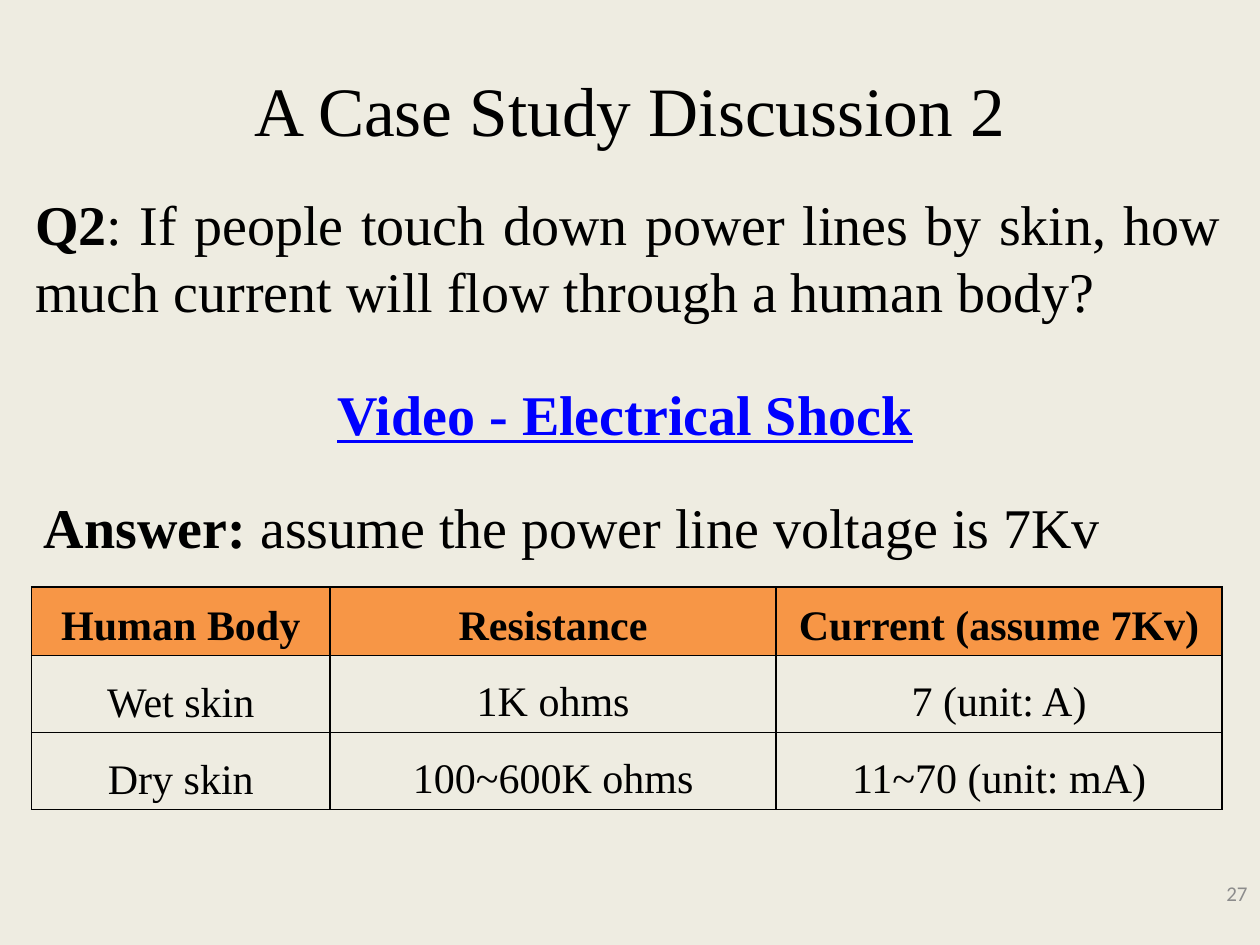
from lxml.etree import SubElement
from pptx import Presentation
from pptx.dml.color import RGBColor as RGB
from pptx.enum.text import MSO_ANCHOR as ANCHOR, MSO_AUTO_SIZE as FIT, PP_ALIGN as ALIGN
from pptx.oxml.ns import qn
from pptx.util import Inches, Pt

COLORS = {"paper": "EEECE1", "ink": "000000", "link": "0000FF",
          "number": "8C8C8C", "header": "F79646"}
SERIF = {"name": "Times New Roman", "size": Pt(32), "bold": False}
BOLD = {"bold": True}
INSETS = ("margin_left", "margin_top", "margin_right", "margin_bottom")
FLUSH = dict.fromkeys(INSETS, 0)
MIDDLE = {"vertical_anchor": ANCHOR.MIDDLE, "word_wrap": True}
GROWING = {"word_wrap": False, "auto_size": FIT.SHAPE_TO_FIT_TEXT}

TEXTS = [
    ((0.5, 0.55, 9, 0.62), ALIGN.CENTER, MIDDLE,
     [("A Case Study Discussion 2", "ink", {"size": Pt(39.6)})]),
    ((7.75, 6.89, 2.25, 0.4), ALIGN.RIGHT, MIDDLE,
     [("27", "number", {"name": "Calibri", "size": Pt(12)})]),
    ((0.28, 1.5, 9.42, 1.08), ALIGN.JUSTIFY, {**FLUSH, **GROWING, "word_wrap": True},
     [("Q2", "ink", BOLD),
      (": If people touch down power lines by skin, how much current "
       "will flow through a human body?", "ink", {})]),
    ((2.58, 2.96, 4.81, 0.64), ALIGN.LEFT, GROWING,
     [("Video - Electrical Shock", "link", {"bold": True, "underline": True})]),
    ((0.25, 3.86, 8.96, 0.64), ALIGN.LEFT, GROWING,
     [("Answer: ", "ink", BOLD),
      ("assume the power line voltage is 7Kv", "ink", {})]),
]

SKIN_ROWS = [
    ("Human Body", "Resistance", "Current (assume 7Kv)"),
    ("Wet skin", "1K ohms", "7 (unit: A)"),
    ("Dry skin", "100~600K ohms", "11~70 (unit: mA)"),
]
TABLE_BOX = (0.25, 4.66, 9.45, 1.76)
COLUMN_WIDTHS = (2.37, 3.54, 3.54)
ROW_HEIGHTS = (0.54, 0.61, 0.61)


def apply(target, values):
    for key, value in values.items():
        setattr(target, key, value)


def write(paragraph, align, runs):
    paragraph.alignment = align
    for words, color, font in runs:
        run = paragraph.add_run()
        run.text = words
        apply(run.font, {**SERIF, **font})
        run.font.color.rgb = RGB.from_string(COLORS[color])


def add_borders(cell):
    properties = cell._tc.get_or_add_tcPr()
    for side in ("a:lnL", "a:lnR", "a:lnT", "a:lnB"):
        line = SubElement(properties, qn(side), w=str(Pt(1)))
        SubElement(SubElement(line, qn("a:solidFill")), qn("a:srgbClr"), val=COLORS["ink"])


def fill_cell(cell, words, is_header, is_label):
    add_borders(cell)
    if is_header:
        cell.fill.solid()
        cell.fill.fore_color.rgb = RGB.from_string(COLORS["header"])
        top, spacing = 0.19, 0.76
    else:
        cell.fill.background()
        top, spacing = (0.26, 0.74) if is_label else (0.24, 0.76)
    apply(cell, dict(zip(INSETS, map(Inches, (0.1, top, 0.1, 0.05)))))
    cell.vertical_anchor = ANCHOR.MIDDLE
    paragraph = cell.text_frame.paragraphs[0]
    paragraph.line_spacing = spacing
    write(paragraph, ALIGN.CENTER, [(words, "ink", {"size": Pt(24), "bold": is_header})])


def main():
    deck = Presentation()
    deck.slide_width, deck.slide_height = Inches(10), Inches(7.5)
    slide = deck.slides.add_slide(deck.slide_layouts[6])
    slide.background.fill.solid()
    slide.background.fill.fore_color.rgb = RGB.from_string(COLORS["paper"])

    for box, align, frame_format, runs in TEXTS:
        frame = slide.shapes.add_textbox(*map(Inches, box)).text_frame
        apply(frame, frame_format)
        write(frame.paragraphs[0], align, runs)

    skin_table = slide.shapes.add_table(
        len(SKIN_ROWS), len(COLUMN_WIDTHS), *map(Inches, TABLE_BOX)).table
    for column, width in zip(skin_table.columns, COLUMN_WIDTHS):
        column.width = Inches(width)
    for row, height in zip(skin_table.rows, ROW_HEIGHTS):
        row.height = Inches(height)
    for r, entries in enumerate(SKIN_ROWS):
        for c, words in enumerate(entries):
            fill_cell(skin_table.cell(r, c), words, r == 0, c == 0)

    deck.save("out.pptx")


if __name__ == "__main__":
    main()
